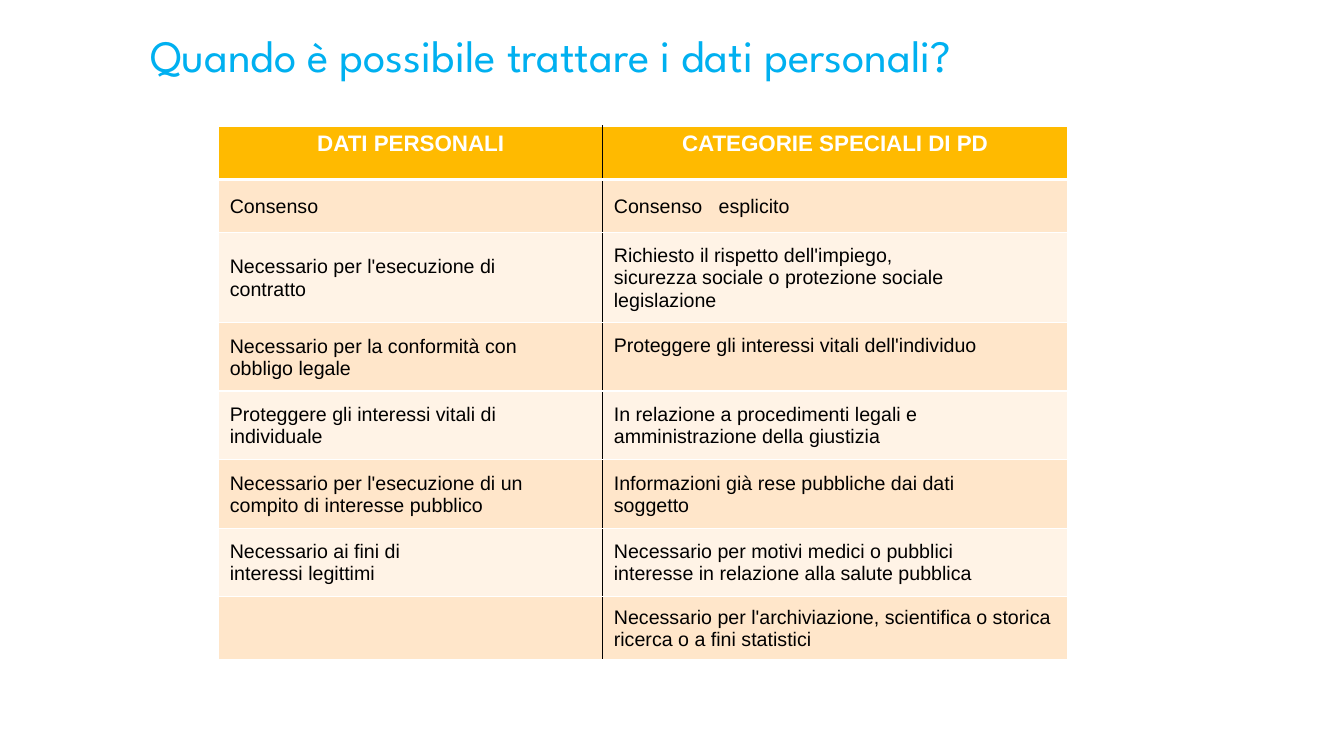
from dataclasses import dataclass

from lxml import etree
from pptx import Presentation
from pptx.dml.color import RGBColor
from pptx.enum.text import MSO_ANCHOR, MSO_AUTO_SIZE, PP_ALIGN
from pptx.oxml.ns import qn
from pptx.util import Inches, Pt

LEFT, CENTER = PP_ALIGN.LEFT, PP_ALIGN.CENTER
TOP, MIDDLE = MSO_ANCHOR.TOP, MSO_ANCHOR.MIDDLE
NO_AUTOFIT = MSO_AUTO_SIZE.NONE
TITLE_ONLY_LAYOUT = 5

# Grid: square modules of a tenth of an inch
MODULE = Inches(0.1)
SLIDE_COLUMNS, SLIDE_ROWS = 133.33, 75
TABLE_LEFT, TABLE_TOP = 21.7, 12.5
COLUMN_WIDTHS = (38.1, 46.1)
ROW_HEIGHTS = (5.3, 5.3, 8.9, 6.8, 6.8, 6.8, 6.8, 6.2)


@dataclass(frozen=True)
class Theme:
    title_font: str = "League Spartan"
    table_font: str = "Arial"
    title_size: int = 32
    header_size: int = 16
    body_size: int = 14
    title: str = "00B0F0"
    header: str = "FFBA00"
    bands: tuple[str, str] = ("FFE6CA", "FFF3E6")
    light: str = "FFFFFF"
    dark: str = "000000"


@dataclass(frozen=True)
class CellStyle:
    fill: str
    color: str
    size: int
    bold: bool
    alignment: PP_ALIGN
    frame: dict
    bottom_width: int = 1


@dataclass(frozen=True)
class LegalBasis:
    personal: str
    special: str


THEME = Theme()
HEADER_FRAME = dict(vertical_anchor=TOP, margin_left=MODULE, margin_right=MODULE,
                    margin_top=Inches(0.05), margin_bottom=Inches(0.05))
BODY_FRAME = dict(vertical_anchor=MIDDLE, margin_left=Inches(0.11), margin_right=Inches(0.01),
                  margin_top=Inches(0.01), margin_bottom=0)
RAISED_FRAME = BODY_FRAME | dict(vertical_anchor=TOP, margin_top=Inches(0.12))
TAB_STOP = Inches(1.04)

HEADINGS = LegalBasis("DATI PERSONALI", "CATEGORIE SPECIALI DI PD")
VITAL_INTERESTS = "Proteggere gli interessi vitali dell'individuo"
LEGAL_BASES = (
    LegalBasis("Consenso", "Consenso\tesplicito"),
    LegalBasis("Necessario per l'esecuzione di\ncontratto",
               "Richiesto il rispetto dell'impiego,\n"
               "sicurezza sociale o protezione sociale\nlegislazione"),
    LegalBasis("Necessario per la conformità con\nobbligo legale", VITAL_INTERESTS),
    LegalBasis("Proteggere gli interessi vitali di\nindividuale",
               "In relazione a procedimenti legali e\namministrazione della giustizia"),
    LegalBasis("Necessario per l'esecuzione di un\ncompito di interesse pubblico",
               "Informazioni già rese pubbliche dai dati\nsoggetto"),
    LegalBasis("Necessario ai fini di\ninteressi legittimi",
               "Necessario per motivi medici o pubblici\n"
               "interesse in relazione alla salute pubblica"),
    LegalBasis("", "Necessario per l'archiviazione, scientifica o storica\n"
                   "ricerca o a fini statistici"),
)


def modules(count: float) -> int:
    return round(count * MODULE)


def apply_format(target, values: dict) -> None:
    for name, value in values.items():
        setattr(target, name, value)


def format_font(font, name: str, size: int, color: str, bold: bool = False) -> None:
    apply_format(font, dict(name=name, size=Pt(size), bold=bold))
    font.color.rgb = RGBColor.from_string(color)


def add_borders(cell, column: int, bottom_width: int) -> None:
    """Draw white edges, with a dark rule between the two columns."""
    left, right = (THEME.light, THEME.dark) if column == 0 else (THEME.dark, THEME.light)
    edges = (("a:lnL", left, 1), ("a:lnR", right, 1),
             ("a:lnT", THEME.light, 1), ("a:lnB", THEME.light, bottom_width))
    properties = cell._tc.get_or_add_tcPr()
    for position, (tag, color, width) in enumerate(edges):
        line = etree.Element(qn(tag), w=str(Pt(width)))
        fill = etree.SubElement(line, qn("a:solidFill"))
        etree.SubElement(fill, qn("a:srgbClr"), val=color)
        properties.insert(position, line)


def add_tab_stop(paragraph) -> None:
    tabs = etree.SubElement(paragraph._p.get_or_add_pPr(), qn("a:tabLst"))
    etree.SubElement(tabs, qn("a:tab"), pos=str(TAB_STOP), algn="l")


def fill_cell(cell, text: str, column: int, style: CellStyle) -> None:
    cell.text_frame.text = text
    apply_format(cell, style.frame)
    for paragraph in cell.text_frame.paragraphs:
        if "\t" in text:
            add_tab_stop(paragraph)
        paragraph.alignment = style.alignment
        for run in paragraph.runs:
            format_font(run.font, THEME.table_font, style.size, style.color, style.bold)
    cell.fill.solid()
    cell.fill.fore_color.rgb = RGBColor.from_string(style.fill)
    add_borders(cell, column, style.bottom_width)


def add_title(slide, text: str) -> None:
    title = slide.shapes.title
    apply_format(title, dict(left=modules(13.9), top=modules(2.2),
                             width=modules(92.1), height=modules(11.8)))
    frame = title.text_frame
    frame.text = text
    apply_format(frame, HEADER_FRAME | dict(word_wrap=True, auto_size=NO_AUTOFIT))
    paragraph = frame.paragraphs[0]
    paragraph.alignment = LEFT
    format_font(paragraph.runs[0].font, THEME.title_font, THEME.title_size, THEME.title)


def add_legal_bases(slide) -> None:
    table = slide.shapes.add_table(
        len(ROW_HEIGHTS), len(COLUMN_WIDTHS), modules(TABLE_LEFT), modules(TABLE_TOP),
        modules(sum(COLUMN_WIDTHS)), modules(sum(ROW_HEIGHTS))).table
    for column, width in zip(table.columns, COLUMN_WIDTHS):
        column.width = modules(width)
    for row, height in zip(table.rows, ROW_HEIGHTS):
        row.height = modules(height)

    header = CellStyle(THEME.header, THEME.light, THEME.header_size, True,
                       CENTER, HEADER_FRAME, bottom_width=3)
    for row, basis in enumerate((HEADINGS, *LEGAL_BASES)):
        for column, text in enumerate((basis.personal, basis.special)):
            frame = RAISED_FRAME if text == VITAL_INTERESTS else BODY_FRAME
            body = CellStyle(THEME.bands[(row - 1) % 2], THEME.dark, THEME.body_size,
                             False, LEFT, frame)
            fill_cell(table.cell(row, column), text, column, body if row else header)


def main() -> None:
    presentation = Presentation()
    presentation.slide_width = modules(SLIDE_COLUMNS)
    presentation.slide_height = modules(SLIDE_ROWS)
    slide = presentation.slides.add_slide(presentation.slide_layouts[TITLE_ONLY_LAYOUT])

    # Heading
    add_title(slide, "Quando è possibile trattare i dati personali?")

    # Comparison of legal bases
    add_legal_bases(slide)

    presentation.save("out.pptx")


if __name__ == "__main__":
    main()
